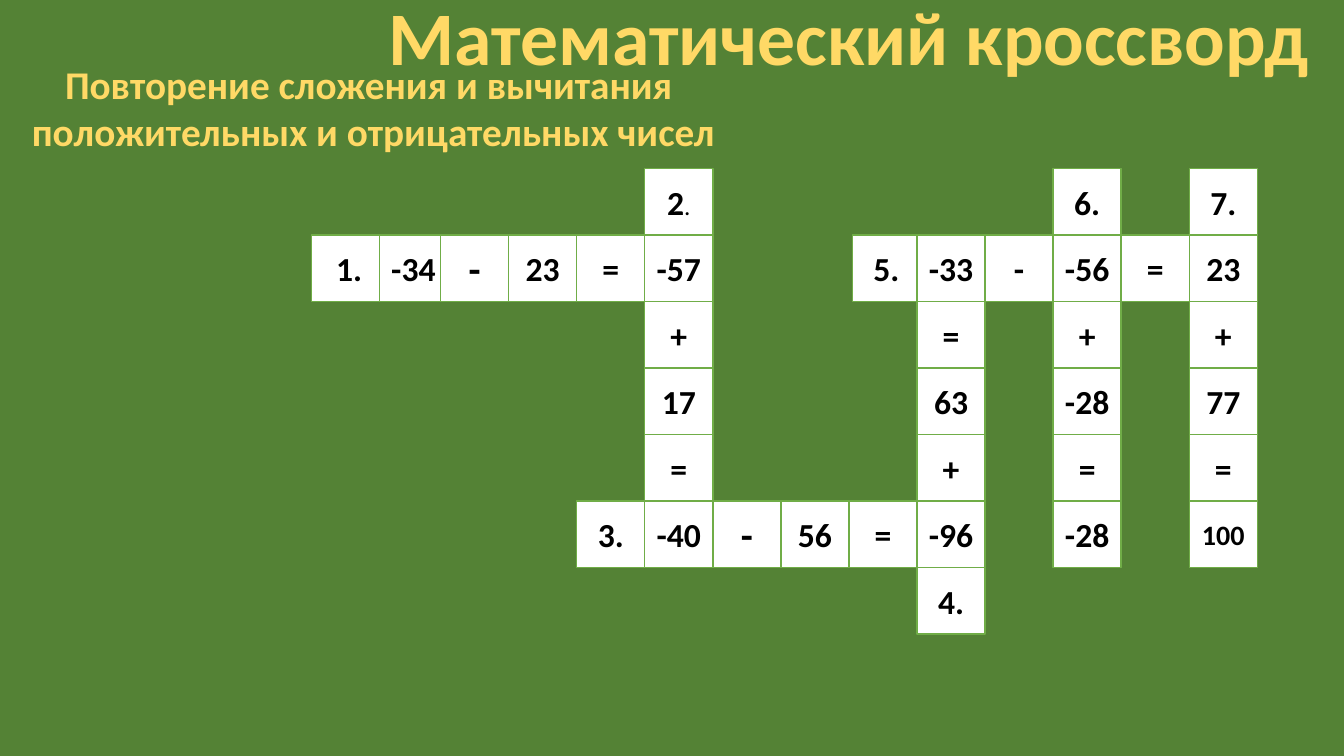
import pptx
import pptx.dml.color
import pptx.enum.shapes
import pptx.enum.text
import pptx.util

Inches = pptx.util.Inches
SLIDE_WIDTH, SLIDE_HEIGHT = 13.33, 7.5
GRID_LEFT, GRID_TOP = 3.02, 1.67
COLUMN, ROW = 1.35 / 2, 0.66
GREEN, LEAF, GOLD, WHITE, BLACK = "548235", "70AD47", "FFD966", "FFFFFF", "000000"

# Each word: first column, first row, column step, row step, entries.
WORDS = [
    (0, 1, 1, 0, ["1.", "-34", "-", "23", "=", "-57"]),
    (5, 0, 0, 1, ["2.", "-57", "+", "17", "=", "-40"]),
    (4, 5, 1, 0, ["3.", "-40", "-", "56", "=", "-96"]),
    (8, 1, 1, 0, ["5.", "-33", "-", "-56", "=", "23"]),
    (9, 6, 0, -1, ["4.", "-96", "+", "63", "=", "-33"]),
    (11, 0, 0, 1, ["6.", "-56", "+", "-28", "=", "-28"]),
    (13, 0, 0, 1, ["7.", "23", "+", "77", "=", "100"]),
]
SHIFTS = {(0, 1): 0.1, (1, 1): 0.1, (8, 1): 0.05}
WIDTHS = {(0, 1): 0.75}
ENTRY_SIZES = {(2, 1): 28, (6, 5): 28, (13, 5): 20}


def paint(color_format, color):
    """Set a fill or font colour from a hex string."""
    color_format.rgb = pptx.dml.color.RGBColor.from_string(color)


def add_run(paragraph, text, size, color, bold=True):
    """Append one formatted run to a centred paragraph."""
    paragraph.alignment = pptx.enum.text.PP_ALIGN.CENTER
    run = paragraph.add_run()
    run.text = text
    run.font.name = "Calibri"
    run.font.size = pptx.util.Pt(size)
    run.font.bold = bold
    paint(run.font.color, color)


def add_heading(holder, left, top, width, height, lines, size):
    """Place a heading and fill it with gold lines."""
    holder.left, holder.width = Inches(left * SLIDE_WIDTH), Inches(width * SLIDE_WIDTH)
    holder.top, holder.height = Inches(top * SLIDE_HEIGHT), Inches(height * SLIDE_HEIGHT)
    frame = holder.text_frame
    frame.word_wrap = False
    frame.auto_size = pptx.enum.text.MSO_AUTO_SIZE.SHAPE_TO_FIT_TEXT
    frame.vertical_anchor = pptx.enum.text.MSO_ANCHOR.TOP
    for index, line in enumerate(lines):
        paragraph = frame.add_paragraph() if index else frame.paragraphs[0]
        add_run(paragraph, line, size, GOLD)


def add_cell(slide, place, entry):
    """Draw one crossword cell at its column and row."""
    column, row = place
    cell = slide.shapes.add_shape(
        pptx.enum.shapes.MSO_SHAPE.RECTANGLE,
        Inches(GRID_LEFT + (column + SHIFTS.get(place, 0)) * COLUMN),
        Inches(GRID_TOP + row * ROW),
        Inches(WIDTHS.get(place, COLUMN)), Inches(ROW))
    cell.shadow.inherit = False
    cell.fill.solid()
    paint(cell.fill.fore_color, WHITE)
    paint(cell.line.color, LEAF)
    cell.line.width = pptx.util.Pt(1)
    cell.text_frame.vertical_anchor = pptx.enum.text.MSO_ANCHOR.MIDDLE
    paragraph = cell.text_frame.paragraphs[0]
    if entry == "2.":
        add_run(paragraph, "2", 24, BLACK)
        add_run(paragraph, ".", 18, BLACK, bold=False)
    else:
        add_run(paragraph, entry, ENTRY_SIZES.get(place, 24), BLACK)


def crossword_cells():
    """Map every cell to its entry, with crossings counted once."""
    cells = {}
    for column, row, across, down, entries in WORDS:
        for step, entry in enumerate(entries):
            cells[column + step * across, row + step * down] = entry
    return cells


def main():
    """Build the crossword slide and save it."""
    deck = pptx.Presentation()
    deck.slide_width, deck.slide_height = Inches(SLIDE_WIDTH), Inches(SLIDE_HEIGHT)
    slide = deck.slides.add_slide(deck.slide_layouts[5])
    slide.background.fill.solid()
    paint(slide.background.fill.fore_color, GREEN)
    for place, entry in crossword_cells().items():
        add_cell(slide, place, entry)
    add_heading(slide.shapes.title, 0.278, -0.02, 0.707, 0.135,
                ["Математический кроссворд"], 54)
    add_heading(slide.shapes.add_textbox(0, 0, 0, 0), 0.014, 0.073, 0.527, 0.139,
                ["Повторение сложения и вычитания ",
                 "положительных и отрицательных чисел"], 28)
    deck.save("out.pptx")


if __name__ == "__main__":
    main()
